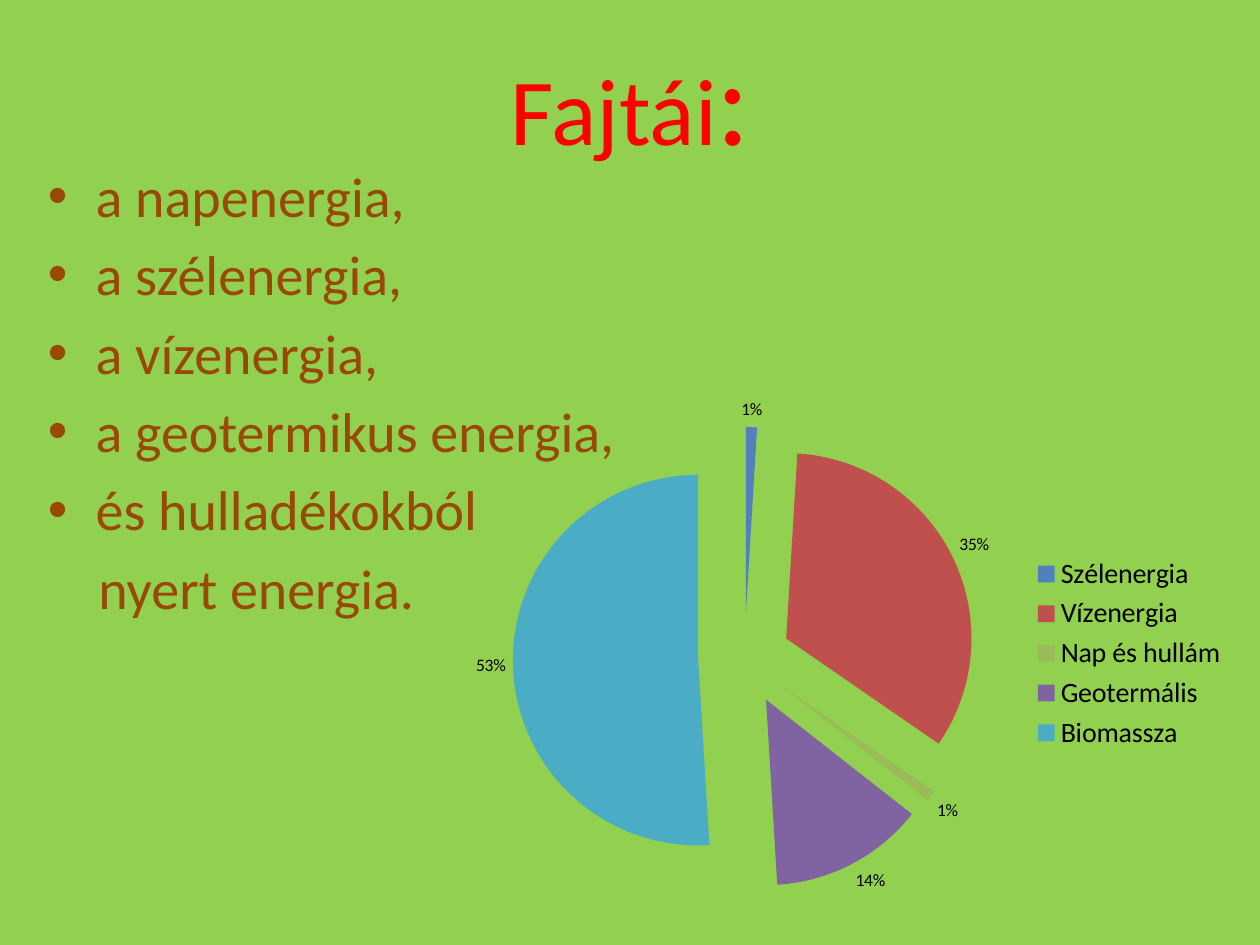
from dataclasses import dataclass
from lxml.etree import SubElement
from pptx import Presentation
from pptx.chart.data import CategoryChartData
from pptx.dml.color import RGBColor as RGB
from pptx.enum.chart import XL_CHART_TYPE as ChartType, XL_LABEL_POSITION as LabelPos, XL_LEGEND_POSITION as LegendPos
from pptx.enum.text import MSO_ANCHOR as Anchor, MSO_AUTO_SIZE as AutoSize, PP_ALIGN as Align
from pptx.oxml import parse_xml
from pptx.oxml.ns import nsdecls, qn
from pptx.util import Inches, Pt


@dataclass(frozen=True)
class Theme:
    font: str = "Calibri"
    background: str = "92D050"
    heading: str = "FF0000"
    listing: str = "984807"
    label: str = "000000"
    heading_size: int = 54
    colon_size: int = 72
    list_size: int = 32
    legend_size: int = 16
    label_size: int = 10


theme = Theme()
prs = Presentation()
prs.slide_width, prs.slide_height = Inches(10), Inches(7.5)
W, H = prs.slide_width, prs.slide_height


def share(left, top, width, height):
    return int(W * left), int(H * top), int(W * width), int(H * height)


def style(font, size, color):
    font.name = theme.font
    font.size = Pt(size)
    font.color.rgb = RGB.from_string(color)


slide = prs.slides.add_slide(prs.slide_layouts[1])
slide.background.fill.solid()
slide.background.fill.fore_color.rgb = RGB.from_string(theme.background)

heading = slide.shapes.title
heading.left, heading.top, heading.width, heading.height = share(0.219, 0.017, 0.563, 0.167)
heading.text_frame.vertical_anchor = Anchor.MIDDLE
heading.text_frame.auto_size = AutoSize.NONE
heading_line = heading.text_frame.paragraphs[0]
heading_line.alignment = Align.CENTER
for words, size in (("Fajtái", theme.heading_size), (":", theme.colon_size)):
    run = heading_line.add_run()
    run.text = words
    style(run.font, size, theme.heading)

energies = slide.placeholders[1]
energies.left, energies.top, energies.width, energies.height = share(0.028, 0.164, 0.9, 0.66)
energies.text_frame.auto_size = AutoSize.NONE
energy_lines = [
    ("a napenergia,", True),
    ("a szélenergia,", True),
    ("a vízenergia,", True),
    ("a geotermikus energia,", True),
    ("és hulladékokból", True),
    ("nyert energia.", False),
]
for number, (words, bulleted) in enumerate(energy_lines):
    line = energies.text_frame.paragraphs[0] if number == 0 else energies.text_frame.add_paragraph()
    run = line.add_run()
    run.text = words
    style(run.font, theme.list_size, theme.listing)
    props = line._p.get_or_add_pPr()
    props.set("marL", str(Inches(0.38 if bulleted else 0.4)))
    props.set("indent", str(Inches(-0.38 if bulleted else 0)))
    if bulleted:
        SubElement(props, qn("a:buChar")).set("char", "•")
    else:
        SubElement(props, qn("a:buNone"))

sources = [
    ("Szélenergia", 0.01, "4F81BD"),
    ("Vízenergia", 0.35, "C0504D"),
    ("Nap és hullám", 0.01, "9BBB59"),
    ("Geotermális", 0.14, "8064A2"),
    ("Biomassza", 0.53, "4BACC6"),
]
shares = CategoryChartData(number_format="0%")
shares.categories = [name for name, _, _ in sources]
shares.add_series("Series 1", [value for _, value, _ in sources])
pie = slide.shapes.add_chart(ChartType.PIE, *share(0.35, 0.405, 0.634, 0.573), shares).chart
pie.has_title = False
style(pie.font, theme.label_size, theme.label)

pie.has_legend = True
pie.legend.position = LegendPos.RIGHT
pie.legend.include_in_layout = False
style(pie.legend.font, theme.legend_size, theme.label)

slices = pie.plots[0].series[0]
slices._element.find(qn("c:tx")).addnext(parse_xml(f'<c:explosion {nsdecls("c")} val="25"/>'))
for number, (_, _, color) in enumerate(sources):
    fill = slices.points[number].format.fill
    fill.solid()
    fill.fore_color.rgb = RGB.from_string(color)

labels = slices.data_labels
labels.show_value = True
labels.show_percentage = False
labels.number_format = "0%"
labels.number_format_is_linked = False
labels.position = LabelPos.OUTSIDE_END
style(labels.font, theme.label_size, theme.label)

plot_area = pie._chartSpace.chart.plotArea
for old_layout in plot_area.findall(qn("c:layout")):
    plot_area.remove(old_layout)
plot_area.insert(0, parse_xml(
    f'<c:layout {nsdecls("c")}><c:manualLayout><c:layoutTarget val="inner"/>'
    '<c:xMode val="edge"/><c:yMode val="edge"/><c:x val="0.09"/><c:y val="0.08"/>'
    '<c:w val="0.58"/><c:h val="0.86"/></c:manualLayout></c:layout>'
))

prs.save("out.pptx")
